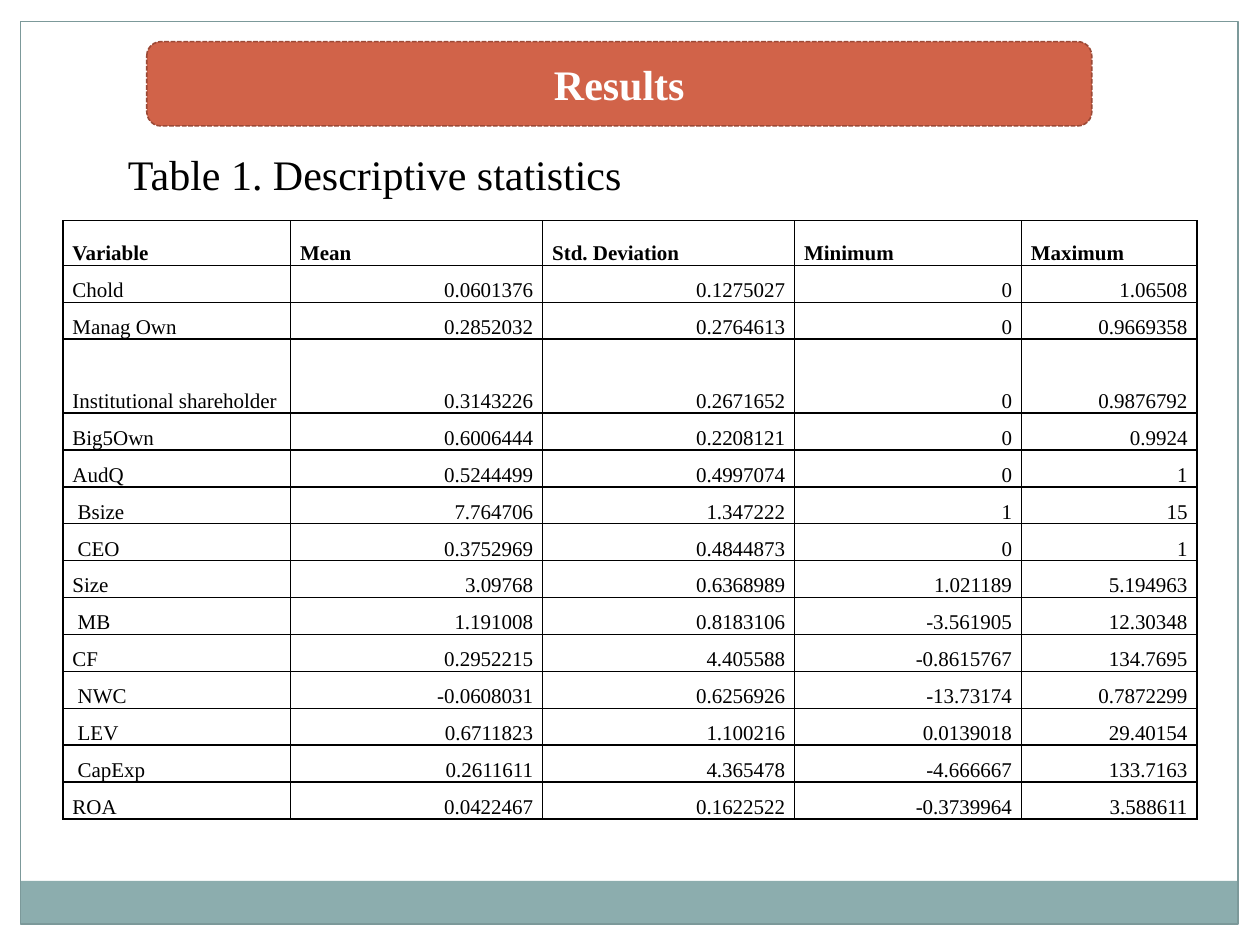
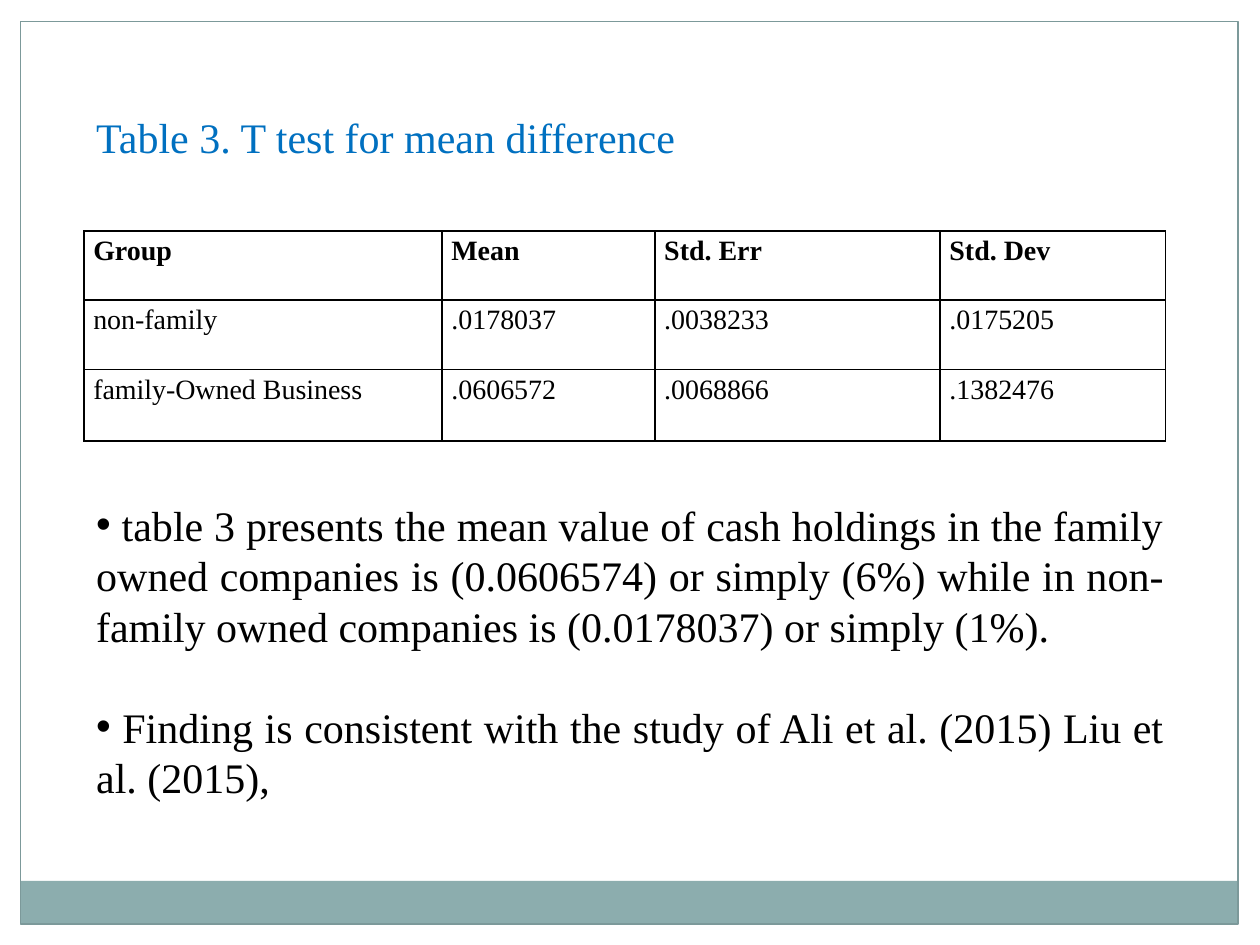
from lxml.etree import SubElement
from pptx import Presentation
from pptx.dml.color import RGBColor
from pptx.enum.dml import MSO_LINE
from pptx.enum.shapes import MSO_SHAPE
from pptx.enum.text import MSO_ANCHOR, PP_ALIGN
from pptx.oxml.ns import qn
from pptx.util import Cm, Pt

FONT = "Times New Roman"
HUES = {
    "ink": "000000",
    "white": "FFFFFF",
    "blue": "0070C0",
    "brick": "D16349",
    "rust": "9B4936",
    "teal": "8CADAE",
    "frame": "7C999A",
}
BANDS = [
    ((0, 0, 25.4, 0.43), "white"),
    ((24.97, 0, 0.43, 19.05), "white"),
    ((0, 0, 0.43, 19.05), "white"),
    ((0.42, 17.76, 24.54, 0.86), "teal"),
]
STATS = [
    ("Variable", "Mean", "Std. Deviation", "Minimum", "Maximum"),
    ("Chold", "0.0601376", "0.1275027", "0", "1.06508"),
    ("Manag Own", "0.2852032", "0.2764613", "0", "0.9669358"),
    ("Institutional shareholder", "0.3143226", "0.2671652", "0", "0.9876792"),
    ("Big5Own", "0.6006444", "0.2208121", "0", "0.9924"),
    ("AudQ", "0.5244499", "0.4997074", "0", "1"),
    (" Bsize", "7.764706", "1.347222", "1", "15"),
    (" CEO", "0.3752969", "0.4844873", "0", "1"),
    ("Size", "3.09768", "0.6368989", "1.021189", "5.194963"),
    (" MB", "1.191008", "0.8183106", "-3.561905", "12.30348"),
    ("CF", "0.2952215", "4.405588", "-0.8615767", "134.7695"),
    (" NWC", "-0.0608031", "0.6256926", "-13.73174", "0.7872299"),
    (" LEV", "0.6711823", "1.100216", "0.0139018", "29.40154"),
    (" CapExp", "0.2611611", "4.365478", "-4.666667", "133.7163"),
    ("ROA", "0.0422467", "0.1622522", "-0.3739964", "3.588611"),
]
TEST = [
    ("Group", "Mean", "Std. Err", "Std. Dev"),
    ("non-family", ".0178037", ".0038233", ".0175205"),
    ("family-Owned Business", ".0606572", ".0068866", ".1382476"),
]
NOTES = [
    " table 3 presents the mean value of cash holdings in the family owned "
    "companies is (0.0606574) or simply (6%) while in non-family owned "
    "companies is (0.0178037) or simply (1%).",
    " Finding is consistent with the study of Ali et al. (2015) Liu et al. (2015),",
]


def color(name):
    """Return the named colour."""
    return RGBColor.from_string(HUES[name])


def style(para, size, hue="ink", bold=False, align=PP_ALIGN.LEFT):
    """Format a paragraph and its runs."""
    para.alignment = align
    for run in para.runs:
        run.font.name = FONT
        run.font.size = Pt(size)
        run.font.bold = bold
        run.font.color.rgb = color(hue)


def add_box(slide, kind, box, fill=None, line=None, width=0.75):
    """Add a flat preset shape with an optional fill and line."""
    shape = slide.shapes.add_shape(kind, *map(Cm, box))
    shape.shadow.inherit = False
    if fill:
        shape.fill.solid()
        shape.fill.fore_color.rgb = color(fill)
    else:
        shape.fill.background()
    if line:
        shape.line.color.rgb = color(line)
        shape.line.width = Pt(width)
    else:
        shape.line.fill.background()
    return shape


def add_page(deck):
    """Add a slide with the shared bands and frame."""
    slide = deck.slides.add_slide(deck.slide_layouts[6])
    for box, fill in BANDS:
        add_box(slide, MSO_SHAPE.RECTANGLE, box, fill)
    add_box(slide, MSO_SHAPE.RECTANGLE, (0.42, 0.43, 24.54, 18.2), line="frame")
    return slide


def add_banner(slide, text):
    """Add the rounded title banner."""
    shape = add_box(slide, MSO_SHAPE.ROUNDED_RECTANGLE,
                    (2.96, 0.84, 19.05, 1.7), "brick", "rust", 0.9)
    shape.line.dash_style = MSO_LINE.SQUARE_DOT
    frame = shape.text_frame
    frame.text = text
    frame.vertical_anchor = MSO_ANCHOR.MIDDLE
    style(frame.paragraphs[0], 24, "white", True, PP_ALIGN.CENTER)


def add_text(slide, box, text, hue="ink"):
    """Add a wrapped text box and return its frame."""
    frame = slide.shapes.add_textbox(*map(Cm, box)).text_frame
    frame.word_wrap = True
    frame.text = text
    for para in frame.paragraphs:
        style(para, 24, hue)
    return frame


def add_notes(slide, box, notes):
    """Add justified bullet notes."""
    frame = add_text(slide, box, "\n".join(notes))
    for i, para in enumerate(frame.paragraphs):
        para.alignment = PP_ALIGN.JUSTIFY
        para.space_before = Pt(29 if i else 0)
        props = para._p.get_or_add_pPr()
        SubElement(props, qn("a:buFont"), typeface="Arial")
        SubElement(props, qn("a:buChar"), char="•")


def set_edges(cell):
    """Draw thin dark borders around a cell."""
    props = cell._tc.get_or_add_tcPr()
    for side in ("lnL", "lnR", "lnT", "lnB"):
        edge = SubElement(props, qn("a:" + side), w=str(Pt(1)))
        fill = SubElement(edge, qn("a:solidFill"))
        SubElement(fill, qn("a:srgbClr"), val=HUES["ink"])


def add_grid(slide, spot, cols, rows, data, size, anchor, align):
    """Add a bordered table with a bold head; align sets the body values."""
    box = map(Cm, (*spot, sum(cols), sum(rows)))
    table = slide.shapes.add_table(len(rows), len(cols), *box).table
    table.first_row = table.horz_banding = False
    for col, width in zip(table.columns, cols):
        col.width = Cm(width)
    for r, (row, high, line) in enumerate(zip(table.rows, rows, data)):
        row.height = Cm(high)
        for c, (cell, text) in enumerate(zip(row.cells, line)):
            set_edges(cell)
            cell.fill.background()
            cell.margin_left = cell.margin_right = Cm(0.19)
            cell.margin_top = cell.margin_bottom = 0
            cell.vertical_anchor = anchor
            cell.text_frame.text = text
            para = cell.text_frame.paragraphs[0]
            para.line_spacing = 1.15
            style(para, size, bold=r == 0,
                  align=align if r and c else PP_ALIGN.LEFT)


def main():
    """Build and save the deck."""
    deck = Presentation()
    deck.slide_width, deck.slide_height = Cm(25.4), Cm(19.05)

    stats = add_page(deck)
    add_text(stats, (2.33, 2.86, 20.32, 1.27), "Table 1. Descriptive statistics")
    head = 0.9
    step = (12.06 - head) / 15
    highs = [head] + [step] * 2 + [step * 2] + [step] * 11
    add_grid(stats, (1.27, 4.45), (4.59, 5.08, 5.08, 4.57, 3.54), highs,
             STATS, 12, MSO_ANCHOR.BOTTOM, PP_ALIGN.RIGHT)
    add_banner(stats, "Results")

    test = add_page(deck)
    add_grid(test, (1.69, 4.66), (7.22, 4.29, 5.75, 4.54), (1.39, 1.4, 1.44),
             TEST, 16, MSO_ANCHOR.TOP, PP_ALIGN.LEFT)
    add_text(test, (1.69, 2.13, 20.52, 1.27),
             "Table 3. T test for mean difference", "blue")
    add_notes(test, (1.69, 9.94, 22.02, 6.4), NOTES)

    deck.save("out.pptx")


if __name__ == "__main__":
    main()
